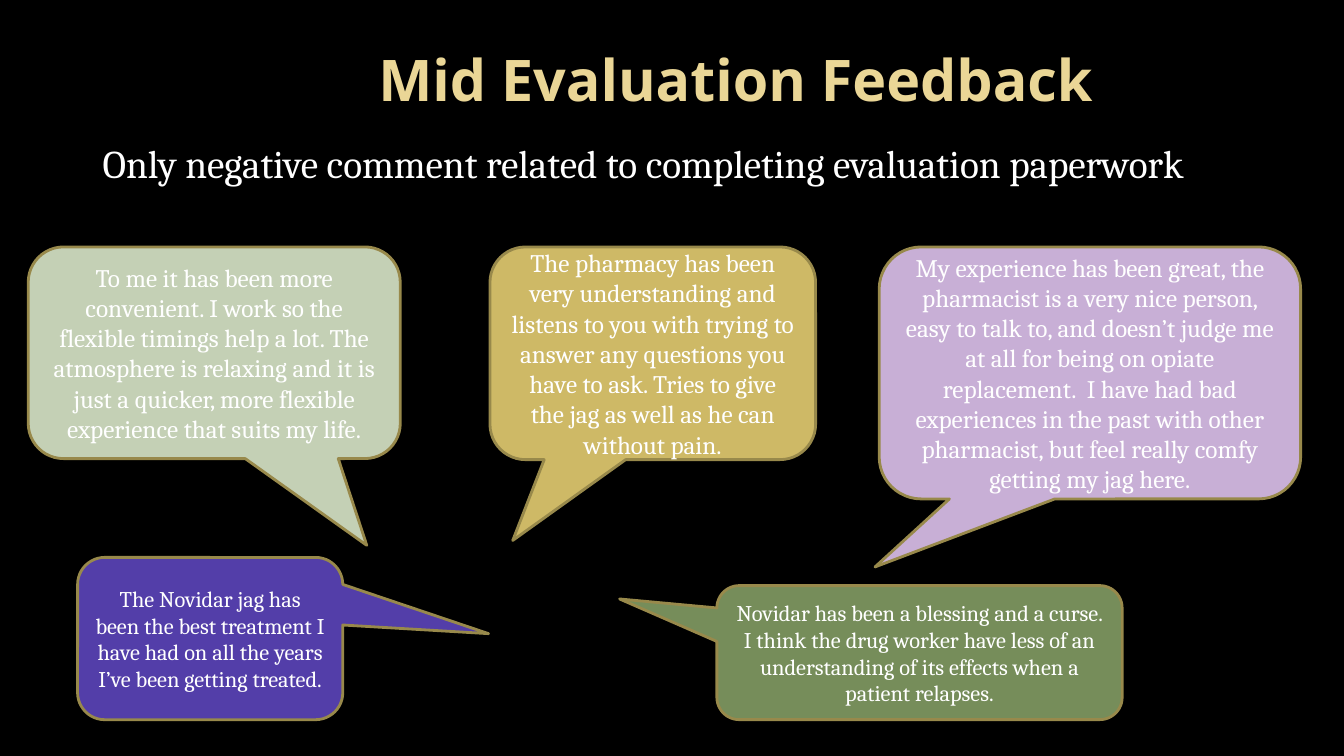
from pptx import Presentation
from pptx.dml.color import RGBColor
from pptx.enum.shapes import MSO_SHAPE as Shape
from pptx.enum.text import MSO_ANCHOR as Anchor, PP_ALIGN as Align
from pptx.util import Inches, Pt


def color(code):
    return RGBColor.from_string(code)


class Board:
    """Holds the slide and its style."""
    serif, sans = "Cambria", "Open Sans"
    white, gold, edge, back = "FFFFFF", "EAD696", "98894B", "000000"

    def __init__(self, deck):
        self.slide = deck.slides.add_slide(deck.slide_layouts[6])
        fill = self.slide.background.fill
        fill.solid()
        fill.fore_color.rgb = color(self.back)

    def label(self, shape, text, size, font, ink, align, anchor, bold=False):
        frame = shape.text_frame
        frame.word_wrap = True
        frame.vertical_anchor = anchor
        para = frame.paragraphs[0]
        para.alignment = align
        run = para.add_run()
        run.text = text
        run.font.size = Pt(size)
        run.font.name = font
        run.font.bold = bold
        run.font.color.rgb = color(ink)
        return para

    def box(self, area):
        return self.slide.shapes.add_textbox(*map(Inches, area))

    def title(self, area, text):
        self.label(self.box(area), text, 41, self.sans, self.gold,
                   Align.CENTER, Anchor.MIDDLE, bold=True)

    def lead(self, area, text):
        para = self.label(self.box(area), text, 28, self.serif, self.white,
                          Align.LEFT, Anchor.TOP)
        para.space_before = Pt(5.6)

    def quote(self, area, tip, fill, size, text):
        bubble = self.slide.shapes.add_shape(
            Shape.ROUNDED_RECTANGULAR_CALLOUT, *map(Inches, area))
        bubble.adjustments[0], bubble.adjustments[1] = tip
        bubble.shadow.inherit = False
        bubble.fill.solid()
        bubble.fill.fore_color.rgb = color(fill)
        bubble.line.color.rgb = color(self.edge)
        bubble.line.width = Pt(2)
        self.label(bubble, text, size, self.serif, self.white,
                   Align.CENTER, Anchor.MIDDLE)


# Area, tip of the tail, fill, text size, words
QUOTES = [
    ((0.28, 2.45, 3.69, 2.1), (0.41, 0.91), "C4D0B5", 18,
     "To me it has been more convenient. I work so the flexible timings help "
     "a lot. The atmosphere is relaxing and it is just a quicker, more "
     "flexible experience that suits my life."),
    ((4.86, 2.45, 3.23, 2.11), (-0.43, 0.88), "CEB966", 18,
     "The pharmacy has been very understanding and listens to you with trying "
     "to answer any questions you have to ask. Tries to give the jag as well "
     "as he can without pain."),
    ((8.72, 2.45, 4.18, 2.5), (-0.51, 0.77), "C8AFD6", 18,
     "My experience has been great, the pharmacist is a very nice person, "
     "easy to talk to, and doesn’t judge me at all for being on opiate "
     "replacement.  I have had bad experiences in the past with other "
     "pharmacist, but feel really comfy getting my jag here."),
    ((0.77, 5.53, 2.63, 1.61), (1.05, -0.03), "533EA9", 16,
     "The Novidar jag has been the best treatment I have had on all the years "
     "I’ve been getting treated."),
    ((7.11, 5.81, 4.02, 1.33), (-0.74, -0.4), "768D5A", 16,
     "Novidar has been a blessing and a curse. I think the drug worker have "
     "less of an understanding of its effects when a patient relapses."),
]


def main():
    deck = Presentation()
    deck.slide_width, deck.slide_height = Inches(13.33), Inches(7.5)
    board = Board(deck)

    # Heading
    board.title((1.55, 0.05, 11.5, 1.45), "Mid Evaluation Feedback")
    board.lead((0.92, 1.33, 11.5, 0.7),
               "Only negative comment related to completing evaluation paperwork")

    # Speech bubbles
    for quote in QUOTES:
        board.quote(*quote)

    deck.save("out.pptx")


if __name__ == "__main__":
    main()
